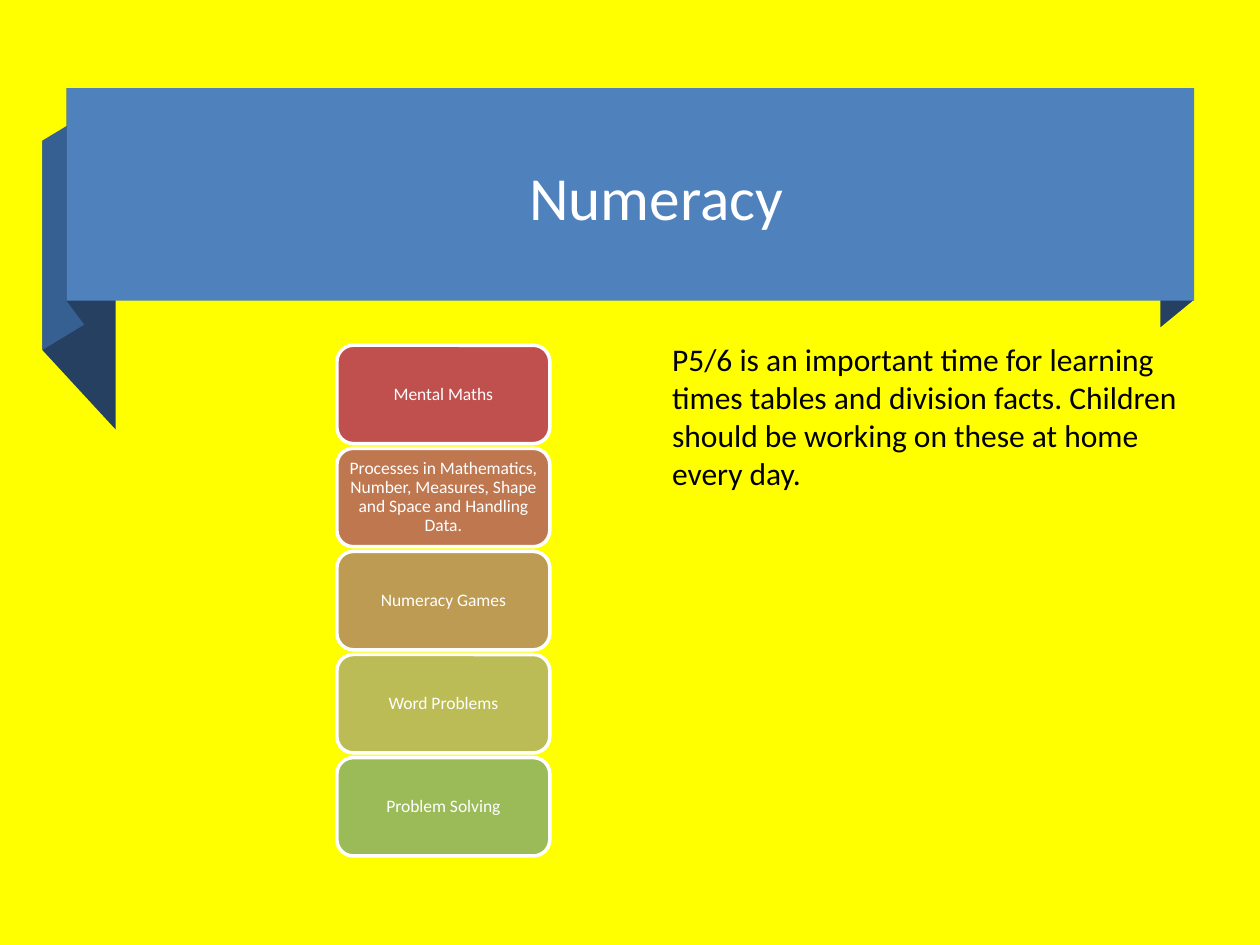
from dataclasses import dataclass

import pptx
import pptx.dml.color
import pptx.enum.shapes
import pptx.enum.text
import pptx.util

Pt = pptx.util.Pt
Kind = pptx.enum.shapes.MSO_SHAPE
Align = pptx.enum.text.PP_ALIGN
Anchor = pptx.enum.text.MSO_ANCHOR

FONT = "Calibri"
COLORS = {
    "page": "FFFF00", "band": "4F81BD", "dark": "254061", "mid": "376092",
    "white": "FFFFFF", "black": "000000", "red": "C0504D", "rust": "BF7750",
    "tan": "BD9B53", "lime": "BCBC56", "green": "9BBB59",
}


@dataclass
class Fold:
    color: str
    points: list[tuple[float, float]]


@dataclass
class Card:
    text: str
    color: str


FOLDS = [
    Fold("dark", [(682, 171.5), (663.1, 187), (663.1, 65.5), (682, 50.4)]),
    Fold("dark", [(66.1, 245.4), (24.2, 200), (24.2, 80.4), (66.1, 126)]),
    Fold("mid", [(48, 185.6), (24.2, 200), (24.2, 80.4), (48, 66)]),
    Fold("dark", [(48, 185.2), (38.1, 172), (38.1, 50.4), (48, 64)]),
]
CARDS = [
    Card("Mental Maths", "red"),
    Card("Processes in Mathematics, Number, Measures, Shape and Space "
         "and Handling Data.", "rust"),
    Card("Numeracy Games", "tan"),
    Card("Word Problems", "lime"),
    Card("Problem Solving", "green"),
]
LEFT, TOP, WIDTH, HEIGHT, STEP = 192.5, 197.3, 121.7, 56.2, 58.9
NOTE = ("P5/6 is an important time for learning times tables and division "
        "facts. Children should be working on these at home every day.")


def rgb(name: str) -> pptx.dml.color.RGBColor:
    return pptx.dml.color.RGBColor.from_string(COLORS[name])


def paint(shape, color: str) -> None:
    """Give a shape a flat fill with no outline or shadow."""
    shape.shadow.inherit = False
    shape.fill.solid()
    shape.fill.fore_color.rgb = rgb(color)
    shape.line.fill.background()


def write(shape, text: str, size: float, color: str, align, anchor):
    frame = shape.text_frame
    frame.word_wrap = True
    frame.auto_size = pptx.enum.text.MSO_AUTO_SIZE.NONE
    frame.vertical_anchor = anchor
    para = frame.paragraphs[0]
    para.text = text
    para.alignment = align
    para.font.name = FONT
    para.font.size = Pt(size)
    para.font.color.rgb = rgb(color)
    return para


def draw_fold(shapes, fold: Fold) -> None:
    first, *rest = [(Pt(x), Pt(y)) for x, y in fold.points]
    pen = shapes.build_freeform(*first)
    pen.add_line_segments(rest)
    paint(pen.convert_to_shape(), fold.color)


def draw_card(shapes, card: Card, top: float) -> None:
    box = shapes.add_shape(Kind.ROUNDED_RECTANGLE, Pt(LEFT), Pt(top),
                           Pt(WIDTH), Pt(HEIGHT))
    paint(box, card.color)
    box.line.color.rgb = rgb("white")
    box.line.width = Pt(2)
    frame = box.text_frame
    frame.margin_left = frame.margin_right = Pt(3.6)
    frame.margin_top = frame.margin_bottom = Pt(2.7)
    para = write(box, card.text, 10, "white", Align.CENTER, Anchor.MIDDLE)
    para.line_spacing = 0.9


def main() -> None:
    deck = pptx.Presentation()
    deck.slide_width, deck.slide_height = Pt(720), Pt(540)
    slide = deck.slides.add_slide(deck.slide_layouts.get_by_name("Title Only"))
    slide.background.fill.solid()
    slide.background.fill.fore_color.rgb = rgb("page")
    shapes = slide.shapes

    for fold in FOLDS:
        draw_fold(shapes, fold)
    band = shapes.add_shape(Kind.RECTANGLE, Pt(38.1), Pt(50.4),
                            Pt(644.3), Pt(121.5))
    paint(band, "band")

    title = shapes.title
    band.element.addnext(title.element)  # bring the title above the band
    title.left, title.top = Pt(80), Pt(60)
    title.width, title.height = Pt(590), Pt(104)
    write(title, "Numeracy", 35, "white", Align.CENTER, Anchor.MIDDLE)

    for row, card in enumerate(CARDS):
        draw_card(shapes, card, TOP + row * STEP)

    note = shapes.add_textbox(Pt(377), Pt(191), Pt(305), Pt(94.3))
    write(note, NOTE, 18, "black", Align.LEFT, Anchor.TOP)

    deck.save("out.pptx")


if __name__ == "__main__":
    main()
